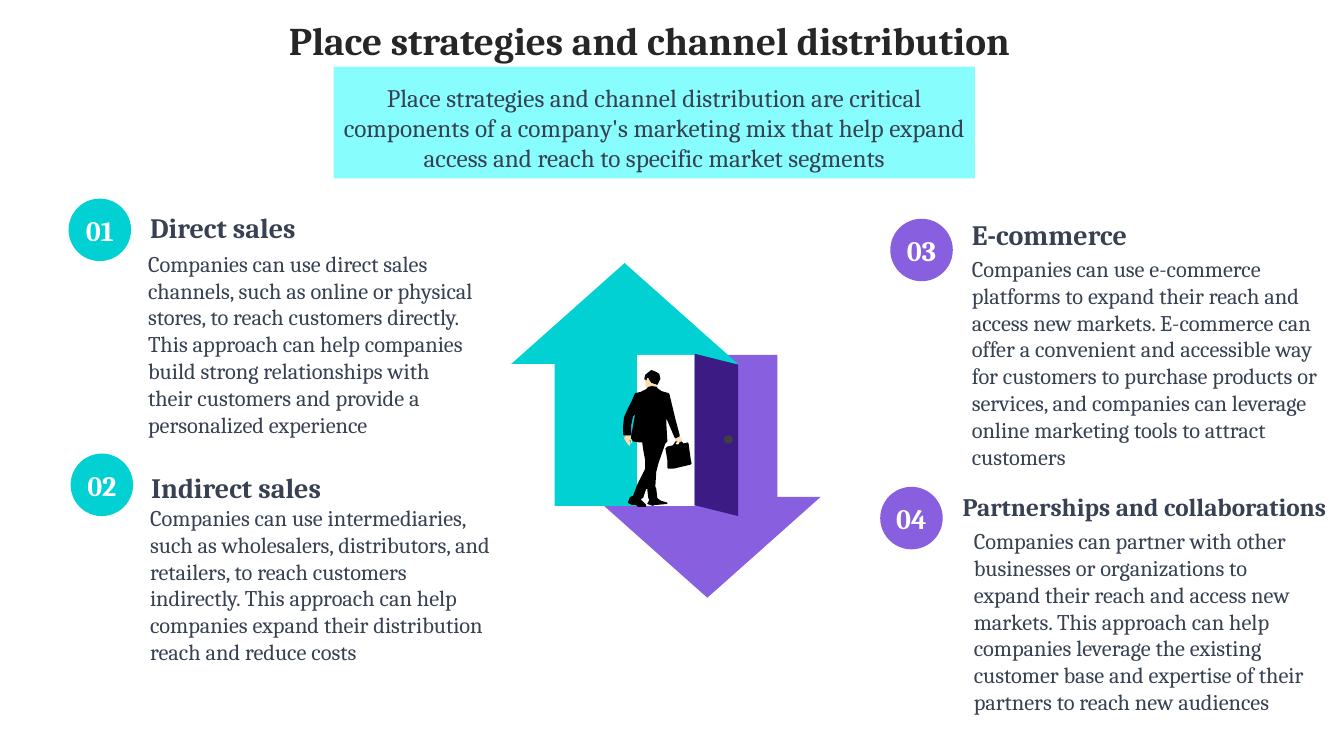
from dataclasses import dataclass

from lxml.etree import SubElement
from pptx import Presentation
from pptx.dml.color import RGBColor
from pptx.enum.shapes import MSO_SHAPE as SHAPE
from pptx.enum.text import MSO_ANCHOR as ANCHOR, PP_ALIGN as ALIGN
from pptx.util import Inches, Pt

FONT = "Cambria"
TEAL, PURPLE, DOOR = "01D1D3", "875FDF", "3C1B84"
INK, TITLE_INK, WHITE, BLACK, SKIN = "374151", "262626", "FFFFFF", "000000", "FBDDAD"
BADGE_SIZE = 0.62


@dataclass
class Strategy:
    number: str
    heading: str
    body: str
    color: str
    badge_at: tuple[float, float]
    heading_at: tuple[float, float]
    body_at: tuple[float, float]
    body_size: tuple[float, float]
    heading_width: float = 2.76
    heading_pt: int = 20


@dataclass
class Outline:
    color: str
    points: list[tuple[int, int]]


STRATEGIES = [
    Strategy("01", "Direct sales",
             "Companies can use direct sales channels, such as online or physical stores, "
             "to reach customers directly. This approach can help companies build strong "
             "relationships with their customers and provide a personalized experience",
             TEAL, (0.68, 1.97), (1.39, 2.04), (1.37, 2.43), (3.48, 2.26)),
    Strategy("02", "Indirect sales",
             "Companies can use intermediaries, such as wholesalers, distributors, and "
             "retailers, to reach customers indirectly. This approach can help companies "
             "expand their distribution reach and reduce costs",
             TEAL, (0.7, 4.5), (1.4, 4.62), (1.39, 4.95), (3.68, 1.72)),
    Strategy("03", "E-commerce",
             "Companies can use e-commerce platforms to expand their reach and access new "
             "markets. E-commerce can offer a convenient and accessible way for customers "
             "to purchase products or services, and companies can leverage online "
             "marketing tools to attract customers",
             PURPLE, (8.83, 2.17), (9.54, 2.11), (9.54, 2.48), (3.68, 2.26)),
    Strategy("04", "Partnerships and collaborations",
             "Companies can partner with other businesses or organizations to expand their "
             "reach and access new markets. This approach can help companies leverage the "
             "existing customer base and expertise of their partners to reach new audiences",
             PURPLE, (8.73, 4.83), (9.45, 4.83), (9.56, 5.18), (3.5, 2.26), 3.88, 18),
]

HAIR = Outline(BLACK, [
    (651, 369), (654, 371), (655, 376), (652, 382), (649, 381), (646, 380), (644, 378),
    (643, 376), (642, 375), (642, 377), (641, 378), (640, 377), (639, 376), (640, 372),
    (641, 371), (646, 367)])
FACE = Outline(SKIN, [
    (641, 386), (640, 382), (640, 376), (641, 378), (642, 375), (643, 375), (644, 377),
    (646, 380), (649, 381), (652, 382), (652, 384), (645, 383), (643, 384)])
RIGHT_HAND = Outline(SKIN, [
    (671, 439), (672, 438), (670, 438), (670, 435), (674, 433), (676, 435), (676, 438),
    (674, 439)])
COLLAR = Outline("9EACC6", [
    (643, 384), (644, 383), (651, 383), (652, 384), (652, 385), (648, 383)])
LEFT_HAND = Outline(SKIN, [
    (625, 432), (627, 435), (627, 440), (626, 439), (626, 437), (625, 436), (624, 437),
    (625, 439), (626, 440), (625, 440), (625, 442), (624, 442), (622, 440), (619, 435),
    (620, 432)])
SUIT = Outline(BLACK, [
    (674, 431), (670, 416), (664, 391), (663, 390), (656, 388), (652, 385), (651, 384),
    (647, 383), (643, 384), (641, 386), (635, 389), (630, 390), (629, 392), (627, 397),
    (624, 403), (622, 407), (619, 414), (618, 423), (618, 431), (619, 432), (625, 432),
    (626, 431), (626, 422), (628, 413), (630, 411), (626, 433), (626, 435), (628, 438),
    (635, 439), (637, 439), (638, 446), (640, 457), (640, 465), (632, 481), (628, 492),
    (625, 493), (623, 498), (623, 499), (627, 501), (631, 501), (633, 503), (636, 503),
    (641, 503), (641, 501), (640, 500), (636, 496), (636, 495), (638, 494), (641, 485),
    (642, 485), (643, 494), (644, 496), (642, 500), (645, 501), (648, 502), (649, 501),
    (651, 501), (662, 500), (662, 499), (660, 498), (656, 497), (653, 495), (652, 494),
    (651, 485), (650, 483), (651, 468), (653, 460), (660, 440), (661, 439), (662, 438),
    (661, 421), (661, 415), (669, 434), (670, 435), (674, 433)])
BRIEFCASE = Outline(BLACK, [
    (686, 460), (685, 455), (683, 440), (682, 439), (678, 440), (676, 438), (674, 439),
    (673, 441), (671, 441), (670, 440), (672, 438), (670, 438), (668, 441), (667, 442),
    (662, 443), (660, 445), (662, 457), (662, 464), (663, 465), (668, 465), (685, 461)])
BUSINESSMAN = [HAIR, FACE, RIGHT_HAND, COLLAR, LEFT_HAND, SUIT, BRIEFCASE]


def rgb(value: str) -> RGBColor:
    return RGBColor.from_string(value)


def paint(sp, color: str) -> None:
    sp.shadow.inherit = False
    sp.fill.solid()
    sp.fill.fore_color.rgb = rgb(color)
    sp.line.fill.background()


def add_block(slide, kind: SHAPE, left: float, top: float, width: float,
              height: float, color: str, rotation: int = 0):
    sp = slide.shapes.add_shape(kind, Inches(left), Inches(top), Inches(width), Inches(height))
    paint(sp, color)
    sp.rotation = rotation
    return sp


def write(sp, text: str, size: int, color: str, bold: bool = False,
          align: ALIGN = ALIGN.LEFT) -> None:
    tf = sp.text_frame
    tf.word_wrap = True
    tf.text = text
    p = tf.paragraphs[0]
    p.alignment = align
    font = p.runs[0].font
    font.name, font.size, font.bold = FONT, Pt(size), bold
    font.color.rgb = rgb(color)


def set_insets(sp, top: float = 0) -> None:
    tf = sp.text_frame
    tf.margin_left = tf.margin_right = tf.margin_bottom = 0
    tf.margin_top = Inches(top)
    tf.vertical_anchor = ANCHOR.MIDDLE


def add_text(slide, at: tuple[float, float], size: tuple[float, float], text: str,
             points: int, bold: bool = False) -> None:
    sp = slide.shapes.add_textbox(*map(Inches, at + size))
    write(sp, text, points, INK, bold)


def add_title(slide) -> None:
    sp = slide.shapes.title
    sp.left, sp.top, sp.width, sp.height = map(Inches, (0.16, 0.05, 12.56, 0.7))
    write(sp, "Place strategies and channel distribution", 28, TITLE_INK, True, ALIGN.CENTER)
    sp.text_frame.vertical_anchor = ANCHOR.MIDDLE


def add_doorway(slide) -> None:
    for left, top, color, rotation in ((5.89, 3.52, PURPLE, 180), (5.07, 2.61, TEAL, 0)):
        arrow = add_block(slide, SHAPE.UP_ARROW, left, top, 2.25, 2.41, color, rotation)
        arrow.adjustments[0], arrow.adjustments[1] = 0.617, 0.445
    add_block(slide, SHAPE.RECTANGLE, 6.32, 3.52, 0.57, 1.5, WHITE)
    for outline in BUSINESSMAN:
        start, *rest = outline.points
        builder = slide.shapes.build_freeform(*start, scale=Inches(0.01))
        builder.add_line_segments(rest, close=True)
        paint(builder.convert_to_shape(), outline.color)
    add_block(slide, SHAPE.PARALLELOGRAM, 6.3, 4.1, 1.61, 0.43, DOOR, 90)
    add_block(slide, SHAPE.OVAL, 7.18, 4.32, 0.09, 0.08, "404040")


def add_summary(slide) -> None:
    sp = add_block(slide, SHAPE.RECTANGLE, 3.31, 0.66, 6.36, 1.11, "88FDFE")
    write(sp, "Place strategies and channel distribution are critical components of a "
              "company's marketing mix that help expand access and reach to specific "
              "market segments", 18, INK, align=ALIGN.CENTER)
    set_insets(sp, top=0.1)


def add_strategy(slide, item: Strategy) -> None:
    add_text(slide, item.heading_at, (item.heading_width, 0.44), item.heading,
             item.heading_pt, True)
    add_text(slide, item.body_at, item.body_size, item.body, 16)
    badge = add_block(slide, SHAPE.OVAL, *item.badge_at, BADGE_SIZE, BADGE_SIZE, item.color)
    write(badge, item.number, 20, WHITE, True, ALIGN.CENTER)
    set_insets(badge)


def main() -> None:
    prs = Presentation()
    prs.slide_width, prs.slide_height = Inches(13.33), Inches(7.5)
    slide = prs.slides.add_slide(prs.slide_layouts[5])
    add_title(slide)
    add_doorway(slide)
    add_summary(slide)
    for item in STRATEGIES:
        add_strategy(slide, item)
    prs.save("out.pptx")


if __name__ == "__main__":
    main()
